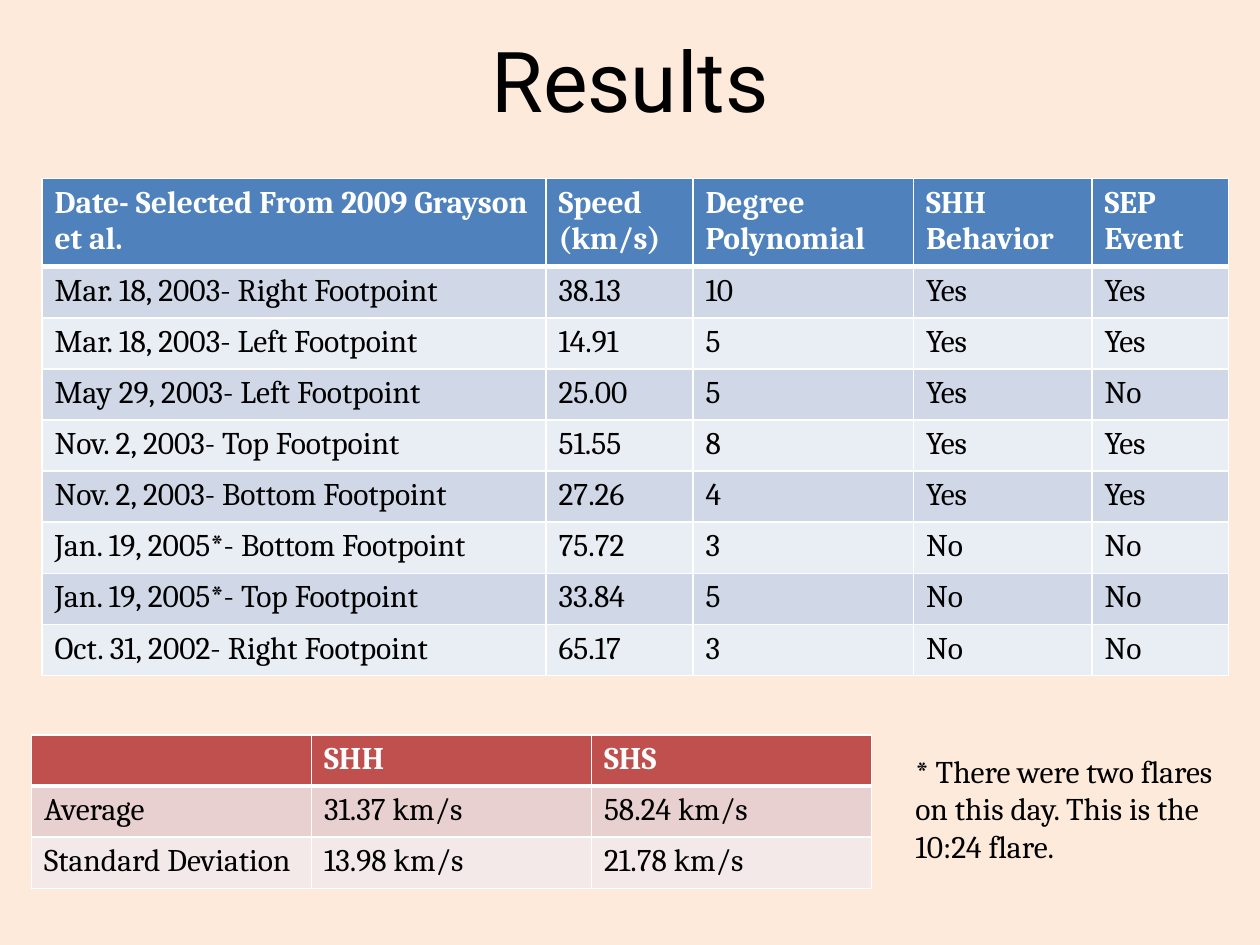
"""Build the Results slide with a flare table, a summary table and a footnote."""
from dataclasses import dataclass

from lxml.etree import SubElement
from pptx import Presentation
from pptx.dml.color import RGBColor
from pptx.enum.text import MSO_ANCHOR as Anchor, PP_ALIGN as Align
from pptx.oxml.ns import qn
from pptx.util import Pt

BODY_FONT = "Cambria"
TITLE_FONT = "Roboto"
BLACK = "000000"
WHITE = "FFFFFF"
ROW_HEIGHT = 29.2


@dataclass
class TextBlock:
    text: str
    left: float
    top: float
    width: float
    height: float
    font: str
    size: float
    align: Align
    anchor: Anchor


@dataclass
class DataTable:
    left: float
    top: float
    column_widths: list[float]
    header_height: float
    header_fill: str
    band_fills: tuple[str, str]
    rows: list[tuple[str, ...]]


TEXTS = [
    TextBlock("Results", 36, 0, 648, 90, TITLE_FONT, 48, Align.CENTER, Anchor.MIDDLE),
    TextBlock("* There were two flares on this day. This is the 10:24 flare.",
              516, 426, 204, 73, BODY_FONT, 18, Align.LEFT, Anchor.TOP),
]

TABLES = [
    DataTable(24, 102, [288, 84, 126, 102, 78], 48, "4F81BD", ("D0D8E8", "E9EDF4"), [
        ("Date- Selected From 2009 Grayson et al.", "Speed (km/s)", "Degree Polynomial",
         "SHH Behavior", "SEP Event"),
        ("Mar. 18, 2003- Right Footpoint", "38.13", "10", "Yes", "Yes"),
        ("Mar. 18, 2003- Left Footpoint", "14.91", "5", "Yes", "Yes"),
        ("May 29, 2003- Left Footpoint", "25.00", "5", "Yes", "No"),
        ("Nov. 2, 2003- Top Footpoint", "51.55", "8", "Yes", "Yes"),
        ("Nov. 2, 2003- Bottom Footpoint", "27.26", "4", "Yes", "Yes"),
        ("Jan. 19, 2005*- Bottom Footpoint", "75.72", "3", "No", "No"),
        ("Jan. 19, 2005*- Top Footpoint", "33.84", "5", "No", "No"),
        ("Oct. 31, 2002- Right Footpoint", "65.17", "3", "No", "No"),
    ]),
    DataTable(18, 420, [160] * 3, ROW_HEIGHT, "C0504D", ("E8D0D0", "F4E9E9"), [
        ("", "SHH", "SHS"),
        ("Average", "31.37 km/s", "58.24 km/s"),
        ("Standard Deviation", "13.98 km/s", "21.78 km/s"),
    ]),
]


def color(hex_value: str) -> RGBColor:
    return RGBColor.from_string(hex_value)


def add_run(paragraph, text: str, font: str, size: float, hex_value: str, bold: bool = False) -> None:
    run = paragraph.add_run()
    run.text = text
    run.font.name = font
    run.font.size = Pt(size)
    run.font.bold = bold
    run.font.color.rgb = color(hex_value)


def add_text(slide, block: TextBlock) -> None:
    shape = slide.shapes.add_textbox(Pt(block.left), Pt(block.top), Pt(block.width), Pt(block.height))
    frame = shape.text_frame
    frame.word_wrap = True
    frame.vertical_anchor = block.anchor
    paragraph = frame.paragraphs[0]
    paragraph.alignment = block.align
    add_run(paragraph, block.text, block.font, block.size, BLACK)


def set_borders(cell, top: float, bottom: float) -> None:
    properties = cell._tc.get_or_add_tcPr()
    for side, width in (("L", 1), ("R", 1), ("T", top), ("B", bottom)):
        line = SubElement(properties, qn(f"a:ln{side}"), w=str(Pt(width)))
        fill = SubElement(line, qn("a:solidFill"))
        SubElement(fill, qn("a:srgbClr"), val=WHITE)


def add_data_table(slide, data: DataTable) -> None:
    heights = [data.header_height] + [ROW_HEIGHT] * (len(data.rows) - 1)
    shape = slide.shapes.add_table(
        len(heights), len(data.column_widths), Pt(data.left), Pt(data.top),
        Pt(sum(data.column_widths)), Pt(sum(heights)))
    table = shape.table
    for column, width in zip(table.columns, data.column_widths):
        column.width = Pt(width)
    for index, (values, height) in enumerate(zip(data.rows, heights)):
        is_header = index == 0
        table.rows[index].height = Pt(height)
        for cell, value in zip(table.rows[index].cells, values):
            set_borders(cell, top=3 if index == 1 else 1, bottom=3 if is_header else 1)
            cell.fill.solid()
            cell.fill.fore_color.rgb = color(
                data.header_fill if is_header else data.band_fills[(index - 1) % 2])
            if value:
                add_run(cell.text_frame.paragraphs[0], value, BODY_FONT, 18,
                        WHITE if is_header else BLACK, is_header)


def main() -> None:
    presentation = Presentation()
    presentation.slide_width = Pt(720)
    presentation.slide_height = Pt(540)
    slide = presentation.slides.add_slide(presentation.slide_layouts[6])
    slide.background.fill.solid()
    slide.background.fill.fore_color.rgb = color("FDEADA")
    for block in TEXTS:
        add_text(slide, block)
    for data in TABLES:
        add_data_table(slide, data)
    presentation.save("out.pptx")


if __name__ == "__main__":
    main()
